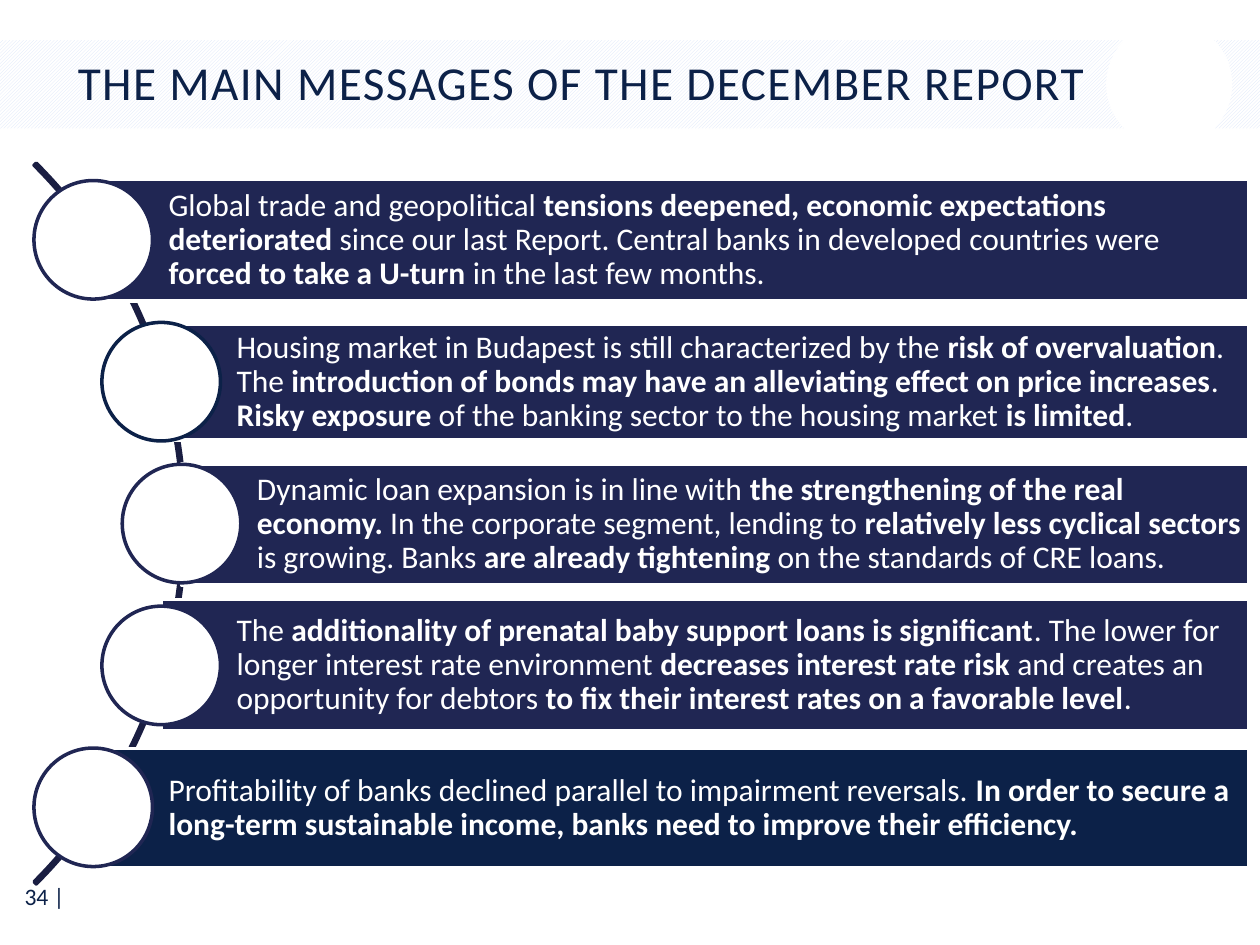
"""Build the slide with the main messages of the December report."""
from dataclasses import dataclass

from lxml.etree import SubElement
from pptx import Presentation
from pptx.dml.color import RGBColor as Rgb
from pptx.enum.dml import MSO_PATTERN as Pat
from pptx.enum.shapes import MSO_SHAPE as Kind
from pptx.enum.text import MSO_ANCHOR as Anchor, PP_ALIGN as Align
from pptx.oxml.ns import qn
from pptx.util import Cm, Pt


@dataclass(frozen=True)
class Theme:
    white: Rgb = Rgb.from_string("FFFFFF")
    navy: Rgb = Rgb.from_string("0C2148")
    blue: Rgb = Rgb.from_string("202653")
    dark: Rgb = Rgb.from_string("1A1E42")
    pale: Rgb = Rgb.from_string("DAE5F9")
    face: str = "Calibri"
    title: Pt = Pt(27)
    body: Pt = Pt(18)
    page: Pt = Pt(13.5)


theme = Theme()
deck = Presentation()
deck.slide_width, deck.slide_height = Cm(25.4), Cm(19.05)
slide = deck.slides.add_slide(deck.slide_layouts[6])


def draw(kind, box, fill=None, line=None):
    shape = slide.shapes.add_shape(kind, *map(Cm, box))
    shape.shadow.inherit = False
    if fill is None:
        shape.fill.background()
    else:
        shape.fill.solid()
        shape.fill.fore_color.rgb = fill
    if line is None:
        shape.line.fill.background()
    else:
        shape.line.color.rgb = line
        shape.line.width = Pt(2)
    return shape


def write(shape, text, size, color, align=Align.LEFT):
    frame = shape.text_frame
    frame.word_wrap = True
    frame.vertical_anchor = Anchor.MIDDLE
    para = frame.paragraphs[0]
    para.alignment = align
    para.line_spacing = 0.9
    font = para.font
    font.name, font.size, font.color.rgb = theme.face, size, color
    for i, part in enumerate(text.split("*")):
        if part:
            run = para.add_run()
            run.text = part
            run.font.bold = i % 2 == 1
    return para


page = slide.shapes.add_textbox(Cm(0.03), Cm(17.63), Cm(1.52), Cm(0.94))
write(page, "34 |", theme.page, theme.navy, Align.RIGHT)

band = draw(Kind.RECTANGLE, (0, 0.81, 25.4, 1.78))
band.fill.patterned()
band.fill.pattern = Pat.LIGHT_UPWARD_DIAGONAL
band.fill.fore_color.rgb = theme.pale
band.fill.back_color.rgb = theme.white
draw(Kind.OVAL, (22.3, 0.43, 2.54, 2.54), theme.white)

title = slide.shapes.add_textbox(Cm(1.32), Cm(0.86), Cm(21.13), Cm(1.7))
head = write(title, "THE MAIN MESSAGES OF THE DECEMBER REPORT", theme.title, theme.navy)
head.runs[0].font._element.set("spc", "80")

arc = draw(Kind.BLOCK_ARC, (-16.81, 0.28, 20.55, 20.55), line=theme.dark)
for i, value in enumerate((189, 27, 0.003)):
    arc.adjustments[i] = value

items = [
    (1.88, 3.61, 2.46, theme.blue, theme.blue,
     "Global trade and geopolitical *tensions deepened, economic expectations "
     "deteriorated* since our last Report. Central banks in developed countries "
     "were *forced to take a U-turn *in the last few months."),
    (3.25, 6.53, 2.34, theme.blue, theme.navy,
     "Housing market in Budapest is still characterized by the *risk of "
     "overvaluation*. The *introduction of bonds may have an alleviating effect "
     "on price increases*. *Risky exposure *of the banking sector to the housing "
     "market *is limited*."),
    (3.66, 9.35, 2.44, theme.blue, theme.blue,
     "Dynamic loan expansion is in line with *the strengthening of the real "
     "economy.* In the corporate segment, lending to *relatively less cyclical "
     "sectors *is growing. Banks *are already tightening *on the standards of "
     "CRE loans."),
    (3.25, 12.09, 2.64, theme.blue, theme.blue,
     "The *additionality of prenatal baby support loans is significant*. The "
     "lower for longer interest rate environment *decreases interest rate risk "
     "*and creates an opportunity for debtors *to fix their interest rates on a "
     "favorable level*."),
    (1.88, 15.09, 2.41, theme.navy, theme.blue,
     "Profitability of banks declined parallel to impairment reversals. *In order "
     "to secure a long-term sustainable income, banks need to improve their "
     "efficiency.*"),
]
right, size, step = 25.17, 2.39, 2.86
for i, (left, top, high, fill, ring, text) in enumerate(items):
    bar = draw(Kind.RECTANGLE, (left, top, right - left, high), fill, theme.white)
    frame = bar.text_frame
    frame.margin_left = Cm(1.52)
    frame.margin_right = frame.margin_top = frame.margin_bottom = Cm(0.13)
    write(bar, text, theme.body, theme.white)
    draw(Kind.OVAL, (left - size / 2, 3.64 + step * i, size, size), theme.white, ring)

deck.save("out.pptx")
